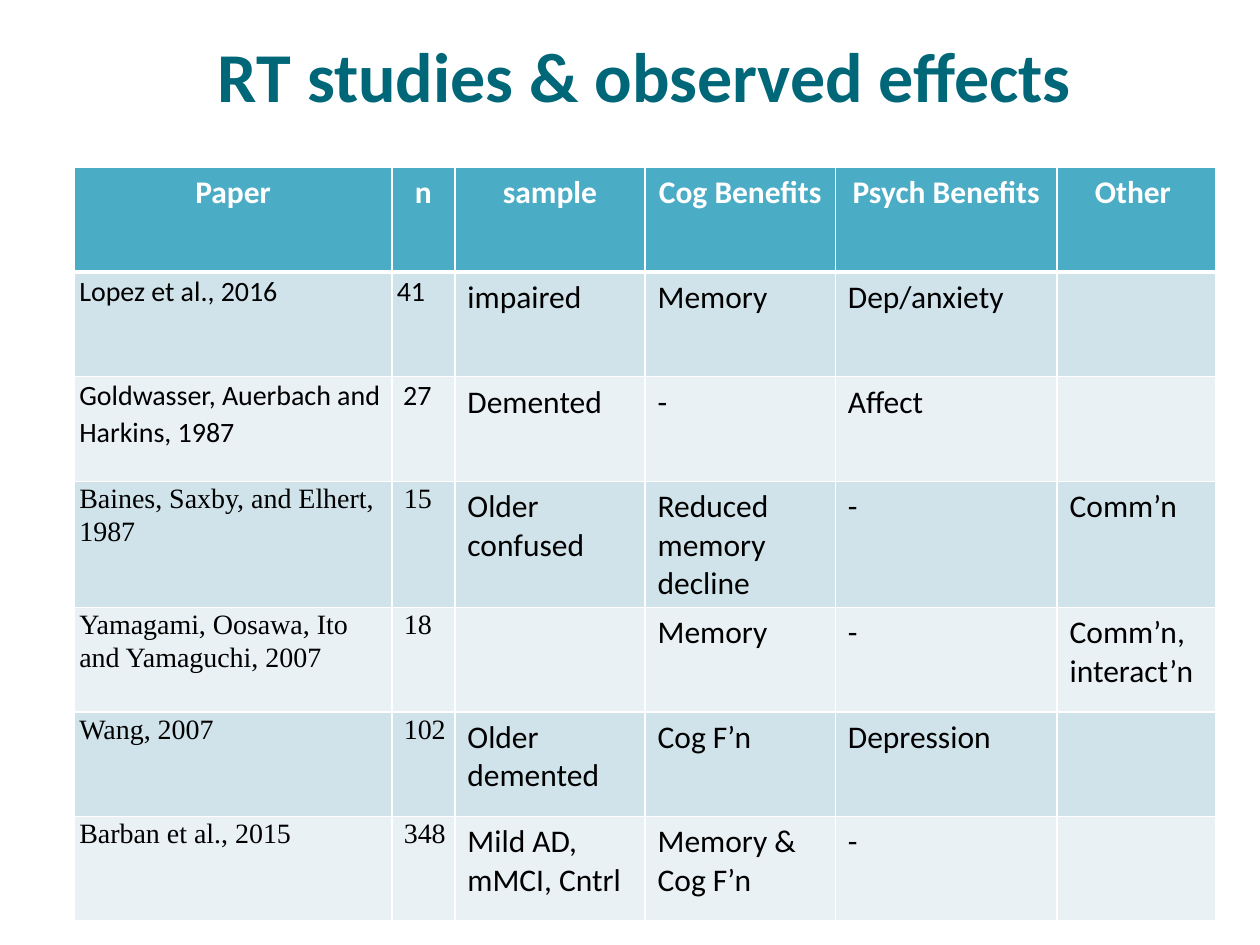
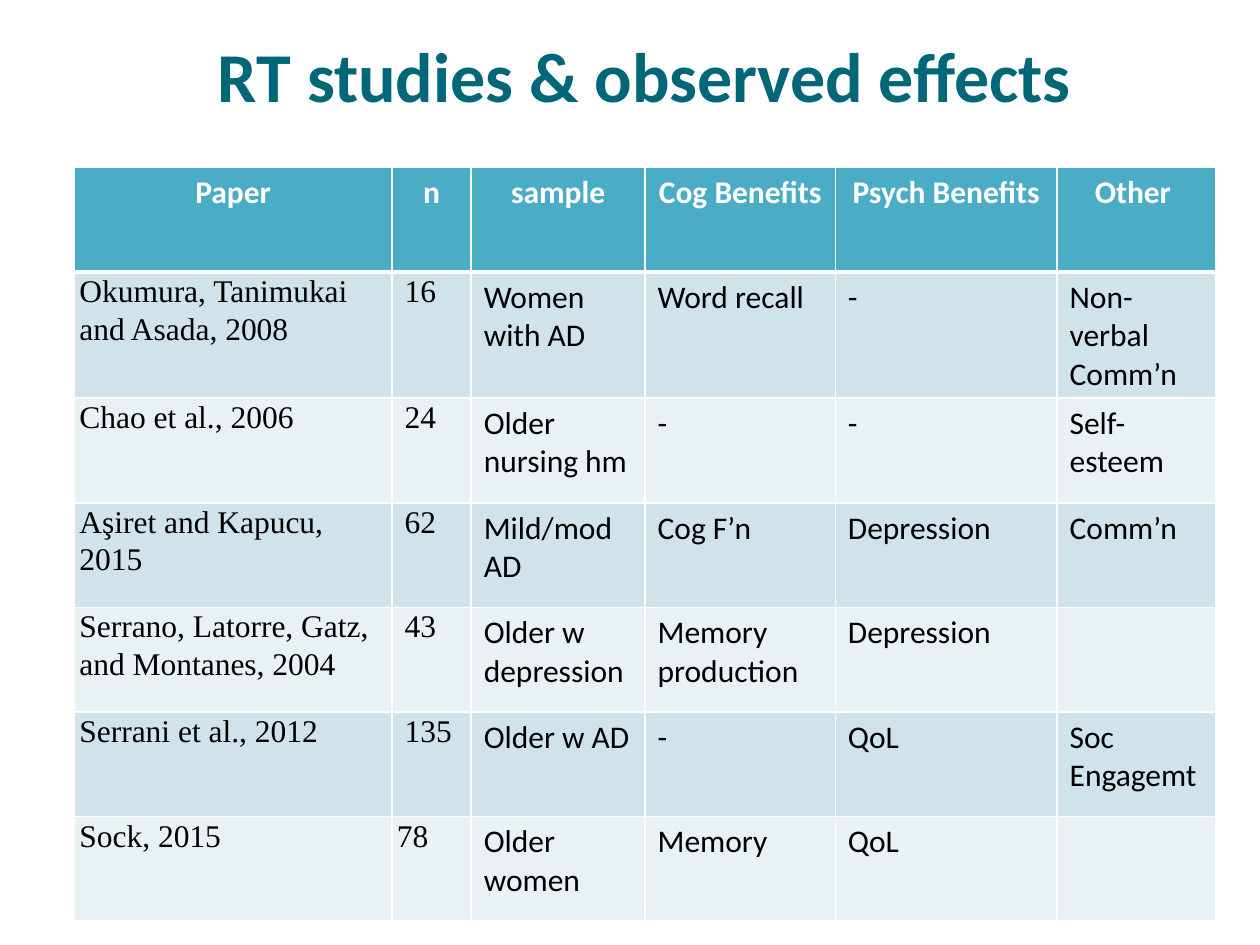
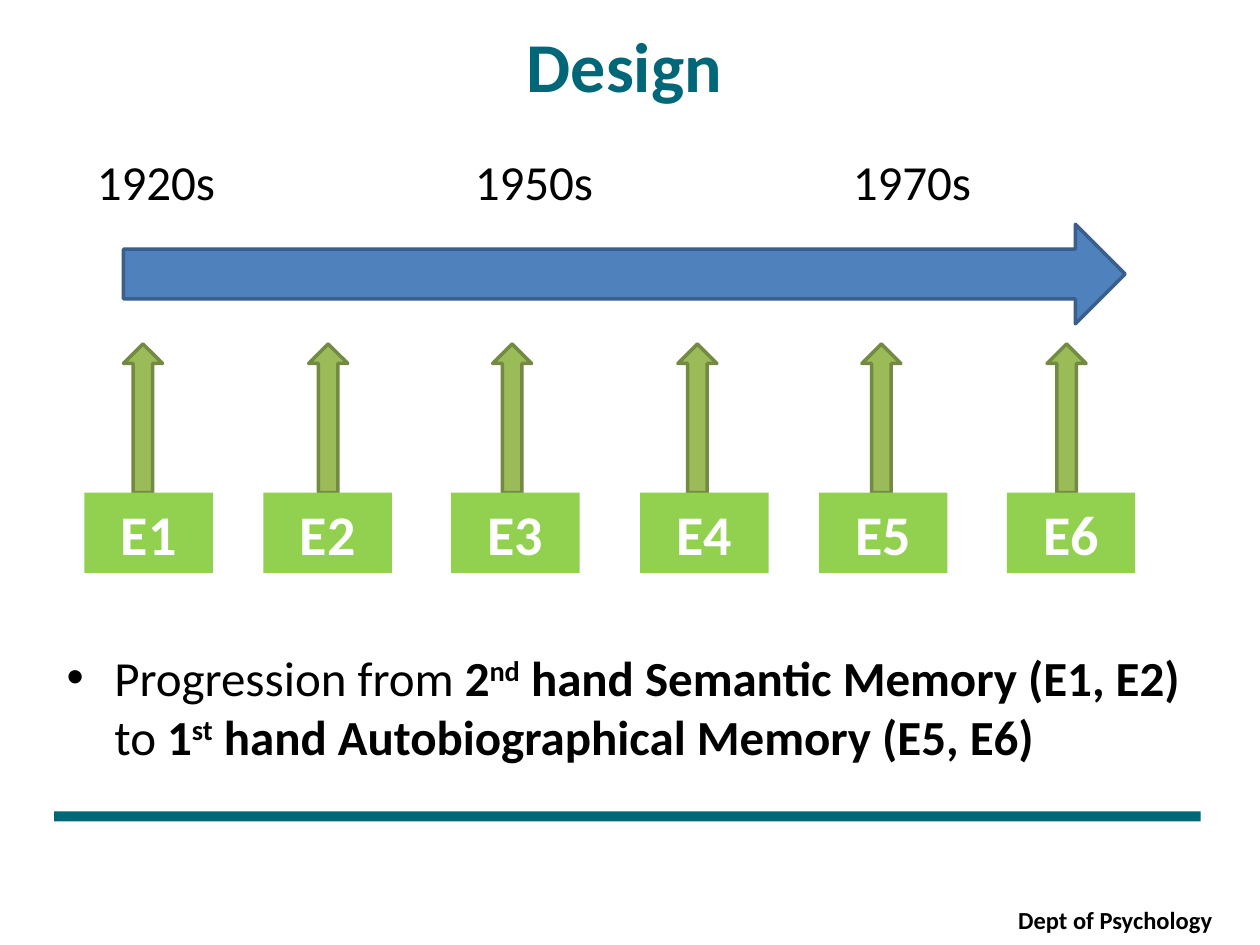
"""Build three slides: two tables of RT studies and the study design."""
from dataclasses import dataclass
from typing import NamedTuple

from lxml import etree
from pptx import Presentation
from pptx import util as u
from pptx.dml import color
from pptx.enum import shapes, text
from pptx.oxml import ns

PX = 9144
TEAL = color.RGBColor(0x00, 0x67, 0x78)
BLACK = color.RGBColor(0x00, 0x00, 0x00)
WHITE = color.RGBColor(0xFF, 0xFF, 0xFF)
HEAD = color.RGBColor(0x4B, 0xAC, 0xC6)
BANDS = (color.RGBColor(0xD0, 0xE3, 0xEA), color.RGBColor(0xE9, 0xF1, 0xF5))
BLUE = color.RGBColor(0x4F, 0x81, 0xBD)
NAVY = color.RGBColor(0x3A, 0x5F, 0x8C)
GREEN = color.RGBColor(0x9B, 0xBB, 0x59)
OLIVE = color.RGBColor(0x73, 0x8A, 0x42)
LIME = color.RGBColor(0x92, 0xD0, 0x50)
SANS, SERIF = "Calibri", "Times New Roman"
KIND, ALIGN = shapes.MSO_SHAPE, text.PP_ALIGN


class Box(NamedTuple):
    left: int
    top: int
    width: int
    height: int

    def emu(self) -> list[int]:
        return [px * PX for px in self]


@dataclass(frozen=True)
class Style:
    size: int
    tint: color.RGBColor = BLACK
    bold: bool = False
    face: str = SANS


class Run(NamedTuple):
    words: str
    bold: bool = False
    lift: int = 0


class Study(NamedTuple):
    paper: str
    count: str
    sample: str
    cog: str
    psych: str
    other: str
    face: str = SERIF


@dataclass(frozen=True)
class Sheet:
    widths: tuple[int, ...]
    size: int
    rows: tuple[Study, ...]


TITLE = Style(40, TEAL, True)
BODY = Style(28)
CELL = Style(18)
HEADER = Style(18, WHITE, True)
LABEL = Style(32, WHITE, True)
FOOT = Style(14, BLACK, True)
LABELS = ("Paper", "n", "sample", "Cog Benefits", "Psych Benefits", "Other ")

SHEETS = (
    Sheet((252, 50, 151, 151, 176, 126), 16, (
        Study("Lopez et al., 2016", "41", "impaired", "Memory", "Dep/anxiety", "", SANS),
        Study("Goldwasser, Auerbach and  Harkins, 1987", " 27", "Demented", "-", "Affect", "", SANS),
        Study("Baines, Saxby, and Elhert, 1987", " 15", "Older confused",
              "Reduced memory decline", "-", "Comm’n"),
        Study("Yamagami, Oosawa, Ito and Yamaguchi, 2007", " 18", "", "Memory", "-",
              "Comm’n, interact’n"),
        Study("Wang, 2007", " 102", "Older demented", "Cog F’n", "Depression", ""),
        Study("Barban et al., 2015", " 348", "Mild AD, mMCI, Cntrl", "Memory & Cog F’n", "-", ""),
    )),
    Sheet((252, 63, 138, 151, 176, 126), 18, (
        Study("Okumura, Tanimukai and Asada, 2008", " 16", "Women with AD", "Word recall", "-",
              "Non-verbal Comm’n"),
        Study("Chao et al., 2006", " 24", "Older nursing hm", "-", "-", "Self-esteem"),
        Study("Aşiret and Kapucu, 2015", " 62", "Mild/mod AD", "Cog F’n", "Depression", "Comm’n"),
        Study("Serrano, Latorre, Gatz, and Montanes, 2004", " 43", "Older w depression",
              "Memory production", "Depression", ""),
        Study("Serrani et al., 2012", " 135", "Older w AD", "-", "QoL", "Soc Engagemt"),
        Study("Sock, 2015", "78", "Older women", "Memory", "QoL", ""),
    )),
)

POINTS = (
    Run("Progression from "), Run("2", True), Run("nd", True, 30),
    Run(" hand Semantic Memory (E1, E2) ", True), Run("to"), Run(" 1", True),
    Run("st", True, 30), Run(" hand Autobiographical Memory (E5, E6)", True),
)


def add_run(para, words: str, style: Style, lift: int = 0) -> None:
    run = para.add_run()
    run.text = words
    font = run.font
    font.size, font.name, font.bold = u.Pt(style.size), style.face, style.bold
    font.color.rgb = style.tint
    if lift:
        font._element.set("baseline", str(lift * 1000))


def add_text(slide, box: Box, words: str, style: Style, align=ALIGN.LEFT):
    frame = slide.shapes.add_textbox(*box.emu()).text_frame
    frame.word_wrap = True
    para = frame.paragraphs[0]
    para.alignment = align
    if words:
        add_run(para, words, style)
    return para


def add_form(slide, kind, box: Box, fill: color.RGBColor, line: color.RGBColor | None = None):
    form = slide.shapes.add_shape(kind, *box.emu())
    form.shadow.inherit = False
    form.fill.solid()
    form.fill.fore_color.rgb = fill
    if line is None:
        form.line.fill.background()
    else:
        form.line.color.rgb = line
        form.line.width = u.Pt(2)
    return form


def add_edges(cell, top: int, base: int) -> None:
    props = cell._tc.get_or_add_tcPr()
    for spot, (side, width) in enumerate(zip("LRTB", (1, 1, top, base))):
        edge = etree.Element(ns.qn(f"a:ln{side}"), w=str(u.Pt(width)))
        fill = etree.SubElement(edge, ns.qn("a:solidFill"))
        etree.SubElement(fill, ns.qn("a:srgbClr"), val=str(WHITE))
        props.insert(spot, edge)


def add_sheet(slide, sheet: Sheet) -> None:
    count = len(sheet.rows) + 1
    box = Box(59, 133, sum(sheet.widths), 83 * count)
    table = slide.shapes.add_table(count, len(LABELS), *box.emu()).table
    for col, width in zip(table.columns, sheet.widths):
        col.width = width * PX
    for row, items in enumerate((LABELS, *sheet.rows)):
        for col in range(len(LABELS)):
            cell = table.cell(row, col)
            cell.fill.solid()
            cell.fill.fore_color.rgb = BANDS[(row - 1) % 2] if row else HEAD
            add_edges(cell, 3 if row == 1 else 1, 1 if row else 3)
            para = cell.text_frame.paragraphs[0]
            style = CELL if row else HEADER
            if not row:
                para.alignment = ALIGN.CENTER
            elif col < 2:
                style = Style(sheet.size, face=items.face)
                para.line_spacing = 1.07
                cell.margin_left = cell.margin_right = 4 * PX
                cell.margin_top = cell.margin_bottom = 0
            if items[col]:
                add_run(para, items[col], style)


def add_tabs(para, *stops: int) -> None:
    tabs = etree.SubElement(para._p.get_or_add_pPr(), ns.qn("a:tabLst"))
    for stop in stops:
        etree.SubElement(tabs, ns.qn("a:tab"), pos=str(stop * PX), algn="l")


def add_bullet(para, indent: int) -> None:
    props = para._p.get_or_add_pPr()
    props.set("marL", str(indent * PX))
    props.set("indent", str(-indent * PX))
    etree.SubElement(props, ns.qn("a:buFont"), typeface="Arial")
    etree.SubElement(props, ns.qn("a:buChar"), char="•")


def add_design(slide) -> None:
    add_form(slide, KIND.RECTANGLE, Box(43, 644, 910, 8), TEAL)
    add_text(slide, Box(82, 13, 827, 110), "Design", TITLE, ALIGN.CENTER)
    add_text(slide, Box(413, 713, 559, 37), "Dept of Psychology", FOOT, ALIGN.RIGHT)
    para = add_text(slide, Box(43, 509, 906, 126), "", BODY)
    add_bullet(para, 38)
    for run in POINTS:
        add_run(para, run.words, Style(BODY.size, bold=run.bold), run.lift)
    add_form(slide, KIND.RIGHT_ARROW, Box(98, 178, 795, 79), BLUE, NAVY)
    for step in range(6):
        add_form(slide, KIND.UP_ARROW, Box(round(98 + 146.6 * step), 273, 31, 118), GREEN, OLIVE)
    for num, left in enumerate((67, 209, 358, 508, 650, 799), 1):
        form = add_form(slide, KIND.RECTANGLE, Box(left, 391, 102, 64), LIME)
        para = form.text_frame.paragraphs[0]
        para.alignment = ALIGN.CENTER
        add_run(para, f"E{num}", LABEL)
    para = add_text(slide, Box(67, 115, 882, 126), "", BODY)
    add_tabs(para, 300, 600)
    add_run(para, "\t".join(("1920s", "1950s", "1970s")), BODY)


def main() -> None:
    deck = Presentation()
    deck.slide_width, deck.slide_height = 1000 * PX, 750 * PX
    blank = deck.slide_layouts[6]
    for sheet in SHEETS:
        slide = deck.slides.add_slide(blank)
        add_text(slide, Box(98, 21, 827, 110), "RT studies & observed effects", TITLE, ALIGN.CENTER)
        add_sheet(slide, sheet)
    add_design(deck.slides.add_slide(blank))
    deck.save("out.pptx")


if __name__ == "__main__":
    main()
